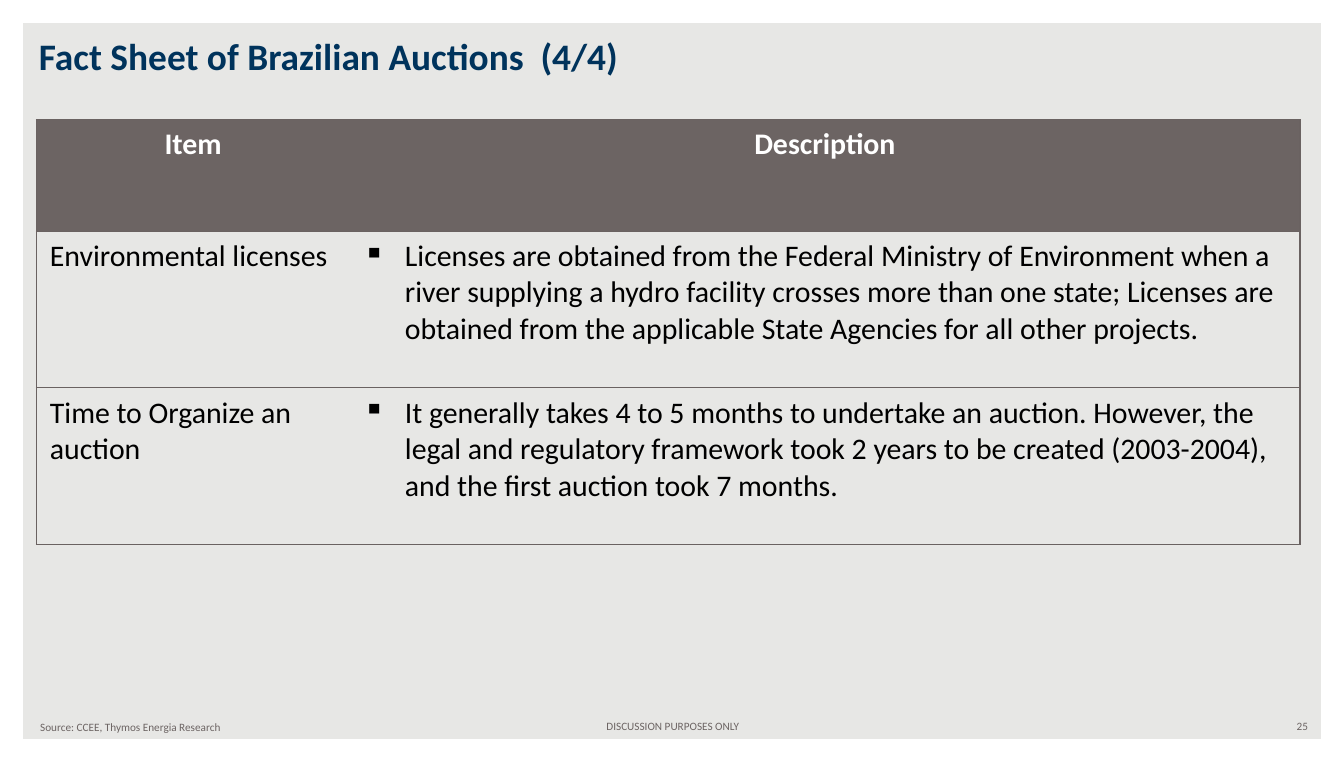
"""Build the fact sheet slide on Brazilian auctions."""
from dataclasses import dataclass

from lxml import etree
from pptx import Presentation
from pptx.dml.color import RGBColor
from pptx.enum.shapes import MSO_SHAPE
from pptx.enum.text import MSO_ANCHOR, MSO_AUTO_SIZE, PP_ALIGN
from pptx.oxml.ns import qn
from pptx.util import Cm, Pt

FRAME = MSO_SHAPE.FRAME
MIDDLE, BOTTOM = MSO_ANCHOR.MIDDLE, MSO_ANCHOR.BOTTOM
NO_FIT = MSO_AUTO_SIZE.NONE
LEFT, CENTER, RIGHT = PP_ALIGN.LEFT, PP_ALIGN.CENTER, PP_ALIGN.RIGHT


@dataclass(frozen=True)
class Theme:
    font: str = "Calibri"
    background: str = "E7E7E5"
    white: str = "FFFFFF"
    black: str = "000000"
    navy: str = "00335C"
    grey: str = "6C6463"
    border: str = "6A6261"
    title_size: float = 20
    body_size: float = 16
    footer_size: float = 6
    border_width: float = 0.75


@dataclass(frozen=True)
class Footer:
    text: str
    left: float
    top: float
    width: float
    align: PP_ALIGN


@dataclass(frozen=True)
class Fact:
    item: str
    description: str


THEME = Theme()
FOOTERS = [
    Footer("Source: CCEE, Thymos Energia Research", 0.51, 13.49, 8.05, LEFT),
    Footer("DISCUSSION PURPOSES ONLY", 8.69, 13.46, 8.05, CENTER),
    Footer("25", 19.05, 13.46, 5.92, RIGHT),
]
FACTS = [
    Fact("Environmental licenses",
         "Licenses are obtained from the Federal Ministry of Environment when a "
         "river supplying a hydro facility crosses more than one state; Licenses "
         "are obtained from the applicable State Agencies for all other projects."),
    Fact("Time to Organize an auction",
         "It generally takes 4 to 5 months to undertake an auction. However, the "
         "legal and regulatory framework took 2 years to be created (2003-2004), "
         "and the first auction took 7 months."),
]
COLUMN_WIDTHS = (5.92, 17.96)
HEADER_HEIGHT, FACT_HEIGHT = 2.11, 2.96


def rgb(value: str) -> RGBColor:
    return RGBColor.from_string(value)


def write(tf, text: str, size: float, color: str, align: PP_ALIGN,
          bold: bool = False, bullet: bool = False) -> None:
    p = tf.paragraphs[0]
    p.alignment = align
    if bullet:
        pPr = p._p.get_or_add_pPr()
        pPr.set("marL", str(Cm(0.79)))
        pPr.set("indent", str(Cm(-0.79)))
        etree.SubElement(pPr, qn("a:buChar"), char="▪")
    r = p.add_run()
    r.text = text
    r.font.name = THEME.font
    r.font.size = Pt(size)
    r.font.bold = bold
    r.font.color.rgb = rgb(color)


def add_frame(prs, s) -> None:
    sp = s.shapes.add_shape(FRAME, 0, 0, prs.slide_width, prs.slide_height)
    sp.adjustments[0] = 0.03
    sp.shadow.inherit = False
    sp.fill.solid()
    sp.fill.fore_color.rgb = rgb(THEME.white)
    sp.line.fill.background()


def set_title(s, text: str) -> None:
    sp = s.shapes.title
    sp.left, sp.top, sp.width, sp.height = Cm(0.48), Cm(0.48), Cm(24.49), Cm(1.12)
    tf = sp.text_frame
    tf.auto_size = NO_FIT
    tf.vertical_anchor = BOTTOM
    write(tf, text, THEME.title_size, THEME.navy, LEFT, bold=True)


def add_footer(s, footer: Footer) -> None:
    sp = s.shapes.add_textbox(Cm(footer.left), Cm(footer.top), Cm(footer.width), Cm(0.51))
    tf = sp.text_frame
    tf.word_wrap = True
    tf.vertical_anchor = MIDDLE
    write(tf, footer.text, THEME.footer_size, THEME.grey, footer.align)


def set_borders(cell, hidden_side: str) -> None:
    tcPr = cell._tc.get_or_add_tcPr()
    for side in ("lnL", "lnR", "lnT", "lnB"):
        ln = etree.SubElement(tcPr, qn(f"a:{side}"), w=str(Pt(THEME.border_width)))
        if side == hidden_side:
            etree.SubElement(ln, qn("a:noFill"))
        else:
            fill = etree.SubElement(ln, qn("a:solidFill"))
            etree.SubElement(fill, qn("a:srgbClr"), val=THEME.border)


def add_fact_table(s, facts: list[Fact]) -> None:
    rows = [Fact("Item", "Description"), *facts]
    heights = [HEADER_HEIGHT] + [FACT_HEIGHT] * len(facts)
    table = s.shapes.add_table(len(rows), len(COLUMN_WIDTHS), Cm(0.69), Cm(2.26),
                               Cm(sum(COLUMN_WIDTHS)), Cm(sum(heights))).table
    table.horz_banding = table.first_row = False
    for column, width in zip(table.columns, COLUMN_WIDTHS):
        column.width = Cm(width)
    for i, (fact, height) in enumerate(zip(rows, heights)):
        table.rows[i].height = Cm(height)
        header = i == 0
        for j, text in enumerate((fact.item, fact.description)):
            cell = table.cell(i, j)
            set_borders(cell, "lnL" if j else "lnR")
            if header:
                cell.fill.solid()
                cell.fill.fore_color.rgb = rgb(THEME.grey)
            else:
                cell.fill.background()
            write(cell.text_frame, text, THEME.body_size,
                  THEME.white if header else THEME.black,
                  CENTER if header else LEFT,
                  bold=header, bullet=j == 1 and not header)


def main() -> None:
    prs = Presentation()
    prs.slide_width, prs.slide_height = Cm(25.4), Cm(14.4)
    s = prs.slides.add_slide(prs.slide_layouts[5])
    s.background.fill.solid()
    s.background.fill.fore_color.rgb = rgb(THEME.background)
    add_frame(prs, s)
    for footer in FOOTERS:
        add_footer(s, footer)
    add_fact_table(s, FACTS)
    set_title(s, "Fact Sheet of Brazilian Auctions  (4/4)")
    prs.save("out.pptx")


if __name__ == "__main__":
    main()
